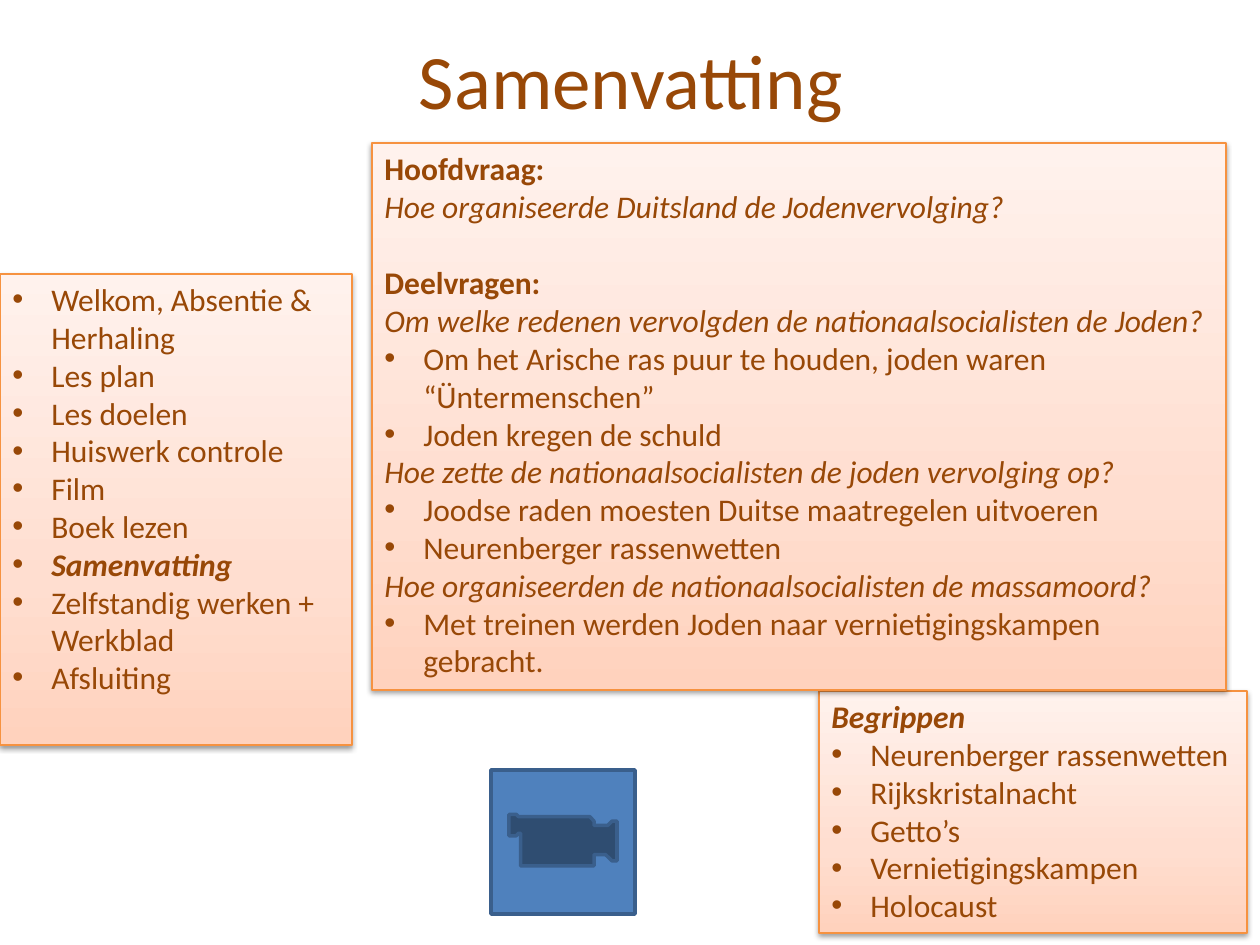
from lxml import etree
from pptx import Presentation
from pptx import util as u
from pptx.dml.color import RGBColor
from pptx.enum import shapes, text
from pptx.oxml import ns

PX = 914400 / 126
FONT = "Calibri"
BROWN = "984807"
ORANGE = "F69240"
PEACH_STOPS = [(0, "FFD2BD"), (35, "FFDED0"), (100, "FFF2ED")]
BULLET_INDENT = 39
BOLD, ITALIC, BULLET = "b", "i", "*"

AGENDA = [
    ("Welkom, Absentie & Herhaling", BULLET),
    ("Les plan", BULLET),
    ("Les doelen", BULLET),
    ("Huiswerk controle", BULLET),
    ("Film", BULLET),
    ("Boek lezen", BULLET),
    ("Samenvatting", BULLET + BOLD + ITALIC),
    ("Zelfstandig werken + Werkblad", BULLET),
    ("Afsluiting", BULLET),
]
TERMS = [
    ("Begrippen", BOLD + ITALIC),
    ("Neurenberger rassenwetten", BULLET),
    ("Rijkskristalnacht", BULLET),
    ("Getto’s", BULLET),
    ("Vernietigingskampen", BULLET),
    ("Holocaust", BULLET),
]
QUESTIONS = [
    ("Hoofdvraag:", BOLD),
    ("Hoe organiseerde Duitsland de Jodenvervolging?", ITALIC),
    ("Deelvragen:", BOLD),
    ("Om welke redenen vervolgden de nationaalsocialisten de Joden?", ITALIC),
    ("Om het Arische ras puur te houden, joden waren\n“Üntermenschen”", BULLET),
    ("Joden kregen de schuld", BULLET),
    ("Hoe zette de nationaalsocialisten de joden vervolging op?", ITALIC),
    ("Joodse raden moesten Duitse maatregelen uitvoeren", BULLET),
    ("Neurenberger rassenwetten", BULLET),
    ("Hoe organiseerden de nationaalsocialisten de massamoord?", ITALIC),
    ("Met treinen werden Joden naar vernietigingskampen\ngebracht.", BULLET),
]


def px(length):
    return u.Emu(round(length * PX))


def color(value):
    return RGBColor.from_string(value)


def add_xml(parent, tag, **attributes):
    return etree.SubElement(parent, ns.qn(tag), attributes)


def style_font(font, size, bold=False, italic=False):
    font.name = FONT
    font.size = u.Pt(size)
    font.bold = bold
    font.italic = italic
    font.color.rgb = color(BROWN)


def add_bullet(paragraph):
    properties = paragraph._p.get_or_add_pPr()
    properties.set("marL", str(px(BULLET_INDENT)))
    properties.set("indent", str(-px(BULLET_INDENT)))
    add_xml(properties, "a:buFont", typeface="Arial")
    add_xml(properties, "a:buChar", char="•")


def fill_peach(panel):
    """Fill with the three-stop gradient, palest at the top."""
    panel.fill.gradient()
    panel.fill.gradient_angle = 90
    stops = panel._element.spPr.find(".//" + ns.qn("a:gsLst"))
    stops.clear()
    for position, value in PEACH_STOPS:
        stop = add_xml(stops, "a:gs", pos=str(position * 1000))
        add_xml(stop, "a:srgbClr", val=value)


def add_soft_shadow(panel):
    panel.shadow.inherit = False
    effects = panel._element.spPr.find(ns.qn("a:effectLst"))
    shadow = add_xml(effects, "a:outerShdw", blurRad=str(u.Pt(3.1)),
                     dist=str(u.Pt(1.6)), dir="5400000", rotWithShape="0")
    shade = add_xml(shadow, "a:srgbClr", val="000000")
    add_xml(shade, "a:alpha", val="38000")


def add_panel(slide, left, top, width, height, lines):
    panel = slide.shapes.add_textbox(px(left), px(top), px(width), px(height))
    fill_peach(panel)
    panel.line.color.rgb = color(ORANGE)
    panel.line.width = u.Pt(0.75)
    add_soft_shadow(panel)
    frame = panel.text_frame
    frame.word_wrap = True
    for index, (wording, style) in enumerate(lines):
        paragraph = frame.add_paragraph() if index else frame.paragraphs[0]
        paragraph.text = wording
        if BULLET in style:
            add_bullet(paragraph)
        for run in paragraph.runs:
            style_font(run.font, 18, BOLD in style, ITALIC in style)
    return panel


def add_title(slide, wording):
    title = slide.shapes.title
    title.left, title.top, title.width, title.height = map(px, (64, 0, 1134, 158))
    frame = title.text_frame
    frame.text = wording
    frame.vertical_anchor = text.MSO_ANCHOR.MIDDLE
    paragraph = frame.paragraphs[0]
    paragraph.alignment = text.PP_ALIGN.CENTER
    style_font(paragraph.runs[0].font, 44)


def add_movie_button(slide, left, top, side):
    button = slide.shapes.add_shape(shapes.MSO_SHAPE.ACTION_BUTTON_MOVIE,
                                    px(left), px(top), px(side), px(side))
    button.shadow.inherit = False
    button.fill.solid()
    button.fill.fore_color.rgb = color("4F81BD")
    button.line.color.rgb = color("3A5F8C")
    button.line.width = u.Pt(2)


def main():
    deck = Presentation()
    deck.slide_width, deck.slide_height = px(1260), px(945)
    slide = deck.slides.add_slide(deck.slide_layouts[5])
    add_title(slide, "Samenvatting")
    add_panel(slide, 0, 274, 352, 471, AGENDA)
    add_panel(slide, 819, 691, 428, 242, TERMS)
    questions = add_panel(slide, 372, 143, 854, 547, QUESTIONS)
    questions.text_frame.paragraphs[2].space_before = u.Pt(22)
    add_movie_button(slide, 491, 770, 144)
    deck.save("out.pptx")


if __name__ == "__main__":
    main()
